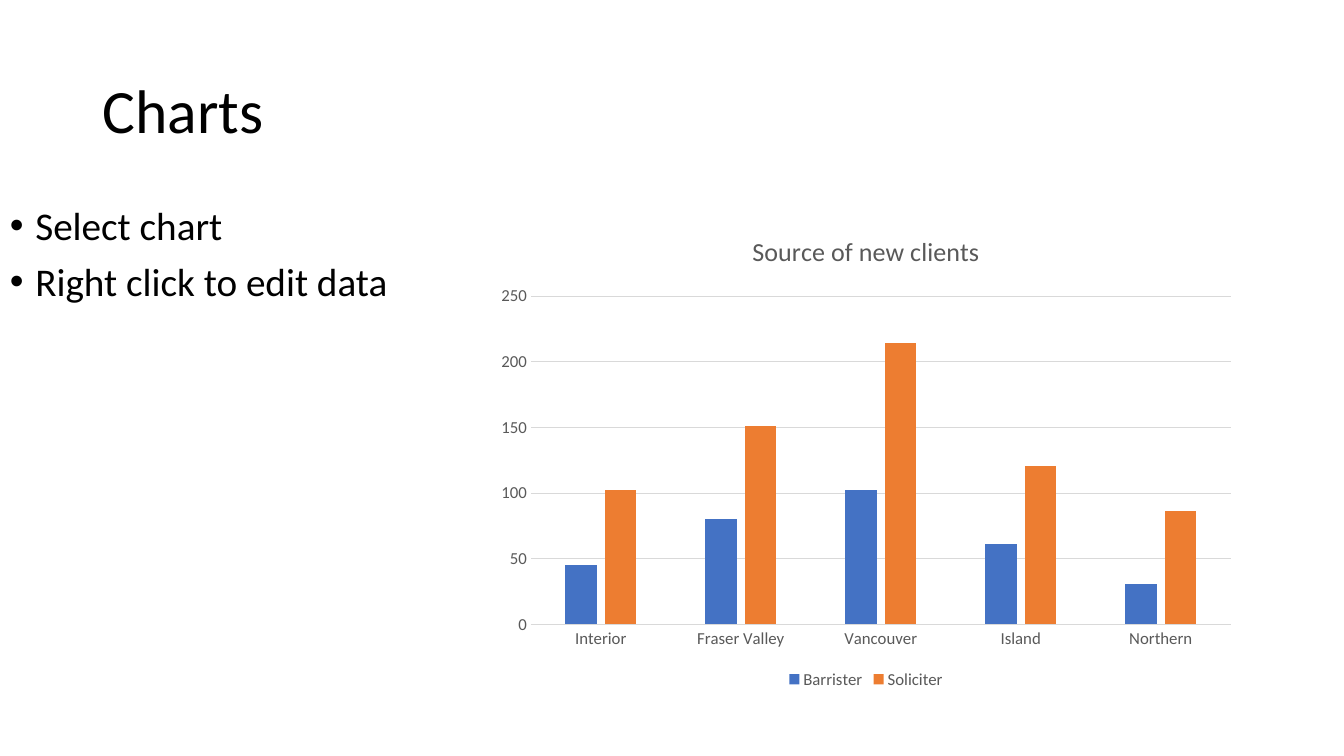
from lxml.etree import SubElement
from pptx import Presentation
from pptx.chart.data import CategoryChartData
from pptx.dml.color import RGBColor
from pptx.enum.chart import XL_CHART_TYPE as ChartType
from pptx.enum.chart import XL_LEGEND_POSITION as LegendPosition
from pptx.enum.chart import XL_TICK_MARK as TickMark
from pptx.enum.text import MSO_ANCHOR as Anchor
from pptx.enum.text import PP_ALIGN as Align
from pptx.oxml.ns import qn
from pptx.util import Cm, Pt

TITLE = "Charts"
STEPS = ["Select chart", "Right click to edit data"]
CHART_TITLE = "Source of new clients"
REGIONS = ["Interior", "Fraser Valley", "Vancouver", "Island", "Northern"]

BLACK = RGBColor(0x00, 0x00, 0x00)
GREY = RGBColor(0x59, 0x59, 0x59)
PALE_GREY = RGBColor(0xD9, 0xD9, 0xD9)
BLUE = RGBColor(0x44, 0x72, 0xC4)
ORANGE = RGBColor(0xED, 0x7D, 0x31)

CLIENTS = {
    "Barrister": ([45, 80, 102, 61, 31], BLUE),
    "Soliciter": ([102, 151, 214, 121, 86], ORANGE),
}

# left, top, width, height in centimetres
TITLE_AREA = (2.33, 1.01, 29.21, 3.68)
STEPS_AREA = (0, 5.07, 10.34, 12.09)
CHART_AREA = (12.25, 5.38, 19.15, 12.09)
BULLET_INDENT = Cm(0.64)


def lengths(area):
    return [Cm(value) for value in area]


def set_font(font, size, color):
    for name, value in {"name": "Calibri", "size": Pt(size), "bold": False}.items():
        setattr(font, name, value)
    font.color.rgb = color


def set_line(line, color):
    line.width = Pt(0.75)
    line.color.rgb = color


def add_bullet(para):
    properties = para._p.get_or_add_pPr()
    properties.set("marL", str(BULLET_INDENT))
    properties.set("indent", str(-BULLET_INDENT))
    SubElement(properties, qn("a:buFont")).set("typeface", "Arial")
    SubElement(properties, qn("a:buChar")).set("char", "•")


def add_title(page):
    title = page.shapes.title
    title.left, title.top, title.width, title.height = lengths(TITLE_AREA)
    frame = title.text_frame
    frame.text = TITLE
    frame.vertical_anchor = Anchor.MIDDLE
    para = frame.paragraphs[0]
    para.alignment = Align.LEFT
    para.line_spacing = 0.9
    set_font(para.runs[0].font, 44, BLACK)


def add_steps(page):
    frame = page.shapes.add_textbox(*lengths(STEPS_AREA)).text_frame
    frame.word_wrap = True
    for index, step in enumerate(STEPS):
        para = frame.add_paragraph() if index else frame.paragraphs[0]
        para.line_spacing = 0.9
        para.space_before = Pt(10)
        add_bullet(para)
        span = para.add_run()
        span.text = step
        set_font(span.font, 28, BLACK)


def add_clients_chart(page):
    data = CategoryChartData()
    data.categories = REGIONS
    for name, (values, _) in CLIENTS.items():
        data.add_series(name, values)
    chart = page.shapes.add_chart(
        ChartType.COLUMN_CLUSTERED, *lengths(CHART_AREA), data).chart
    set_font(chart.font, 12, GREY)

    chart.has_title = True
    heading = chart.chart_title.text_frame
    heading.text = CHART_TITLE
    set_font(heading.paragraphs[0].runs[0].font, 18.6, GREY)
    chart.chart_title.include_in_layout = False

    chart.has_legend = True
    chart.legend.position = LegendPosition.BOTTOM
    chart.legend.include_in_layout = False
    set_font(chart.legend.font, 12, GREY)

    plot = chart.plots[0]
    for name, value in {"gap_width": 219, "overlap": -27, "vary_by_categories": False}.items():
        setattr(plot, name, value)
    for series, (_, color) in zip(plot.series, CLIENTS.values()):
        series.format.fill.solid()
        series.format.fill.fore_color.rgb = color

    for axis in (chart.category_axis, chart.value_axis):
        axis.major_tick_mark = axis.minor_tick_mark = TickMark.NONE
        set_font(axis.tick_labels.font, 12, GREY)
    set_line(chart.category_axis.format.line, PALE_GREY)
    scale = chart.value_axis
    scale.minimum_scale, scale.maximum_scale, scale.major_unit = 0, 250, 50
    scale.format.line.fill.background()
    set_line(scale.major_gridlines.format.line, PALE_GREY)


def main():
    deck = Presentation()
    deck.slide_width, deck.slide_height = Cm(33.87), Cm(19.05)
    page = deck.slides.add_slide(deck.slide_layouts[5])
    add_title(page)
    add_clients_chart(page)
    add_steps(page)
    deck.save("out.pptx")


if __name__ == "__main__":
    main()
